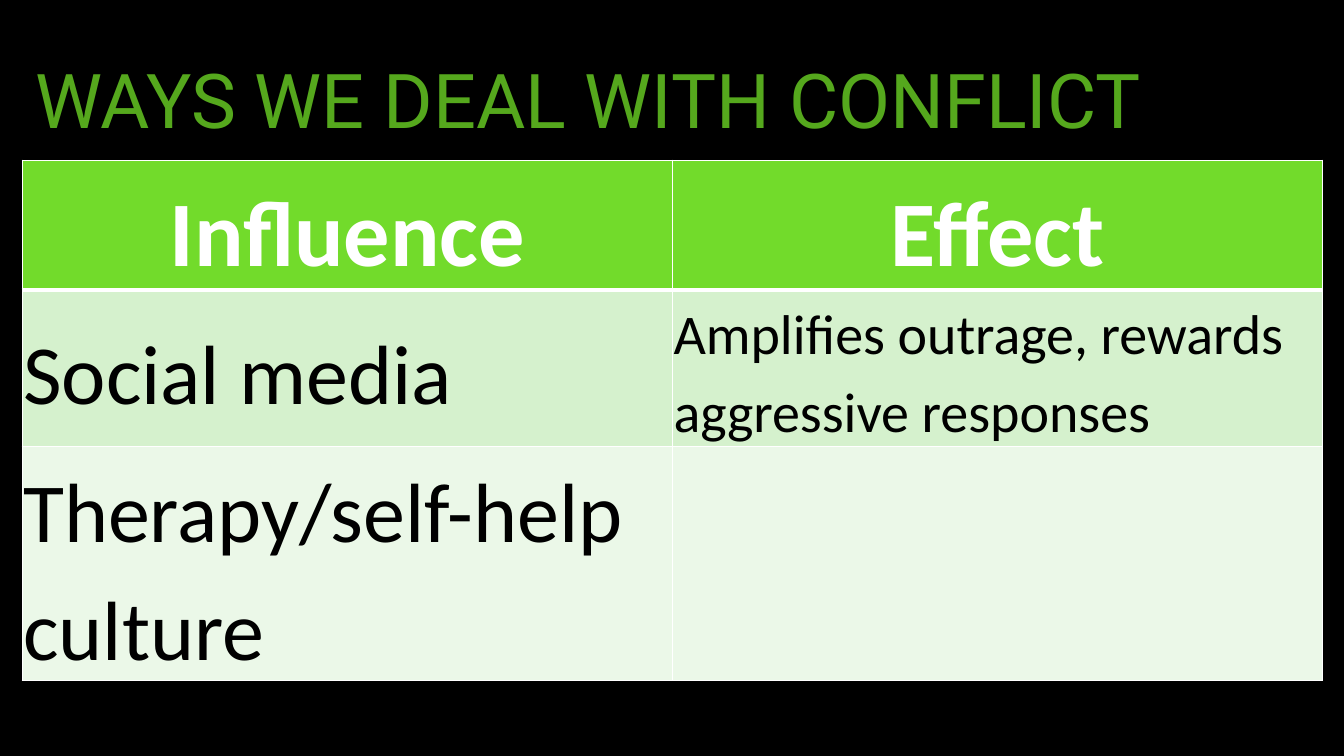
from lxml import etree
from pptx import Presentation
from pptx.dml.color import RGBColor
from pptx.enum.text import MSO_ANCHOR, PP_ALIGN
from pptx.oxml.ns import qn
from pptx.util import Inches, Pt

MIDDLE = MSO_ANCHOR.MIDDLE
LEFT, CENTER = PP_ALIGN.LEFT, PP_ALIGN.CENTER
COLORS = {
    "background": "000000",
    "title": "55A81D",
    "header": "72DB2B",
    "band_dark": "D5F1CD",
    "band_light": "EBF8E8",
    "white": "FFFFFF",
    "black": "000000",
}


def rgb(name):
    return RGBColor.from_string(COLORS[name])


def write(frame, text, size, font="Calibri", color="black", bold=False,
          align=LEFT, spacing=1.15, after=8):
    paragraph = frame.paragraphs[0]
    paragraph.alignment = align
    paragraph.line_spacing = spacing
    paragraph.space_before = Pt(0)
    paragraph.space_after = Pt(after)
    run = paragraph.add_run()
    run.text = text
    run.font.size = Pt(size)
    run.font.name = font
    run.font.bold = bold
    run.font.color.rgb = rgb(color)


class ConflictSlide:
    def __init__(self, presentation):
        self.slide = presentation.slides.add_slide(presentation.slide_layouts[6])
        background = self.slide.background.fill
        background.solid()
        background.fore_color.rgb = rgb("background")

    def title(self, text, left, top, width, height):
        box = self.slide.shapes.add_textbox(
            Inches(left), Inches(top), Inches(width), Inches(height))
        frame = box.text_frame
        frame.word_wrap = True
        frame.vertical_anchor = MIDDLE
        write(frame, text, 54, font="Roboto", color="title", spacing=0.9, after=0)

    def borders(self, cell, bottom):
        properties = cell._tc.get_or_add_tcPr()
        widths = {"a:lnL": 1, "a:lnR": 1, "a:lnT": 1, "a:lnB": bottom}
        for position, (side, width) in enumerate(widths.items()):
            line = etree.Element(qn(side), w=str(Pt(width)))
            fill = etree.SubElement(line, qn("a:solidFill"))
            etree.SubElement(fill, qn("a:srgbClr"), val=COLORS["white"])
            properties.insert(position, line)

    def cell(self, cell, text, fill, bottom=1, **style):
        cell.fill.solid()
        cell.fill.fore_color.rgb = rgb(fill)
        self.borders(cell, bottom)
        cell.vertical_anchor = MIDDLE
        cell.margin_left = cell.margin_right = Inches(0.01)
        cell.margin_top = cell.margin_bottom = Inches(0.01)
        if text:
            write(cell.text_frame, text, **style)

    def table(self, headings, influences, left, top, width, row_height):
        row_count = len(influences) + 1
        table = self.slide.shapes.add_table(
            row_count, len(headings), Inches(left), Inches(top),
            Inches(width), Inches(row_height * row_count)).table
        for column, heading in enumerate(headings):
            self.cell(table.cell(0, column), heading, "header", bottom=3,
                      size=66, color="white", bold=True, align=CENTER)
        for row, (influence, effect) in enumerate(influences, 1):
            band = "band_dark" if row % 2 else "band_light"
            self.cell(table.cell(row, 0), influence, band, size=60)
            self.cell(table.cell(row, 1), effect, band, size=40)


def main():
    presentation = Presentation()
    presentation.slide_width = Inches(13.33)
    presentation.slide_height = Inches(7.5)
    conflict = ConflictSlide(presentation)
    conflict.title("WAYS WE DEAL WITH CONFLICT", 0.25, 0.22, 12.9, 1.62)
    conflict.table(
        ["Influence", "Effect"],
        [("Social media", "Amplifies outrage, rewards aggressive responses"),
         ("Therapy/self-help culture", "")],
        left=0.22, top=1.59, width=12.9, row_height=0.41)
    presentation.save("out.pptx")


if __name__ == "__main__":
    main()
